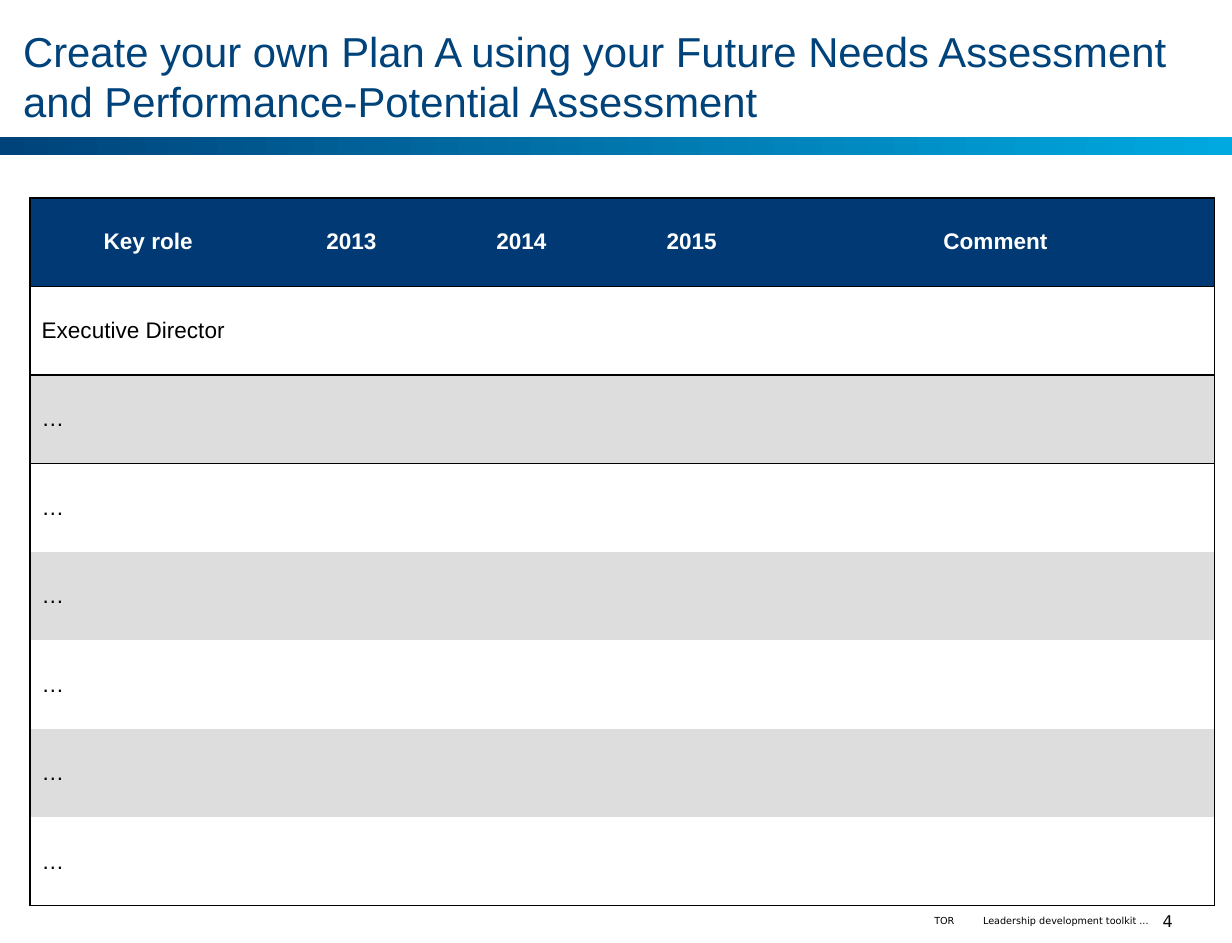
"""Build the Plan A succession slide: title, gradient band, role table and footer."""
import lxml.etree
import pptx
import pptx.dml.color
import pptx.enum.shapes
import pptx.enum.text
import pptx.oxml.ns
import pptx.util

Pt = pptx.util.Pt
ALIGN = pptx.enum.text.PP_ALIGN
MIDDLE = pptx.enum.text.MSO_ANCHOR.MIDDLE
qn = pptx.oxml.ns.qn


def rgb(value):
    """Turn a hex string into a colour."""
    return pptx.dml.color.RGBColor.from_string(value)


def write(frame, text, size, color, font, align=ALIGN.LEFT, bold=False):
    """Fill a text frame with one formatted paragraph."""
    frame.text = text
    paragraph = frame.paragraphs[0]
    paragraph.alignment = align
    for run in paragraph.runs:
        run.font.size = Pt(size)
        run.font.name = font
        run.font.bold = bold
        run.font.color.rgb = rgb(color)


deck = pptx.Presentation()
deck.slide_width = Pt(766.08)
deck.slide_height = Pt(586.08)
slide = deck.slides.add_slide(deck.slide_layouts[6])

band = slide.shapes.add_shape(
    pptx.enum.shapes.MSO_SHAPE.RECTANGLE, 0, Pt(85), deck.slide_width, Pt(11.5))
band.shadow.inherit = False
band.line.fill.background()
band.fill.gradient()
band.fill.gradient_angle = 0
for stop, color in zip(band.fill.gradient_stops, ("00437A", "00A9E0")):
    stop.color.rgb = rgb(color)

title = "Create your own Plan A using your Future Needs Assessment and Performance-Potential Assessment"
captions = [
    (title, 14.4, 11.5, 739.4, 71.3, 0, 5.76, 26, "00437A", "Arial", ALIGN.LEFT, True),
    ("TOR", 577.4, 568.8, 16.6, 7.2, 3.6, 0, 6, "000000", "DejaVu Sans", ALIGN.LEFT, False),
    ("Leadership development toolkit ...", 606.2, 568.8, 108, 7.2, 3.6, 0, 6,
     "000000", "DejaVu Sans", ALIGN.RIGHT, False),
    ("4", 713.5, 568.8, 25.2, 7.2, 0, 0, 10, "080808", "DejaVu Sans", ALIGN.CENTER, False),
]
for text, left, top, width, height, inset_left, inset_right, size, color, font, align, wrap in captions:
    frame = slide.shapes.add_textbox(Pt(left), Pt(top), Pt(width), Pt(height)).text_frame
    frame.margin_left, frame.margin_right = Pt(inset_left), Pt(inset_right)
    frame.margin_top = frame.margin_bottom = 0
    frame.vertical_anchor = MIDDLE
    frame.word_wrap = wrap
    write(frame, text, size, color, font, align)

headings = ["Key role", "2013", "2014", "2015", "Comment"]
roles = ["Executive Director"] + ["…"] * 6
column_widths = [146.9, 105.8, 105.8, 105.8, 272.1]
row_height = 55
row_count = len(roles) + 1
last_row, last_column = row_count - 1, len(headings) - 1

plan = slide.shapes.add_table(
    row_count, len(headings), Pt(18.7), Pt(123),
    Pt(sum(column_widths)), Pt(row_height * row_count)).table
plan.first_row = plan.horz_banding = False
plan._tbl.tblPr.find(qn("a:tableStyleId")).text = "{2D5ABB26-0587-4C30-8999-92F81FD0307C}"
for column, width in zip(plan.columns, column_widths):
    column.width = Pt(width)
for row in plan.rows:
    row.height = Pt(row_height)

for r in range(row_count):
    for c in range(len(headings)):
        cell = plan.cell(r, c)
        cell.vertical_anchor = MIDDLE
        edges = {
            "a:lnL": c == 0,
            "a:lnR": c == last_column,
            "a:lnT": r <= 2,
            "a:lnB": r <= 1 or r == last_row,
        }
        for edge, drawn in edges.items():
            if drawn:
                border = lxml.etree.SubElement(cell._tc.get_or_add_tcPr(), qn(edge), w=str(Pt(1)))
                paint = lxml.etree.SubElement(border, qn("a:solidFill"))
                lxml.etree.SubElement(paint, qn("a:srgbClr"), val="000000")
        if r == 0 or r % 2 == 0:
            cell.fill.solid()
            cell.fill.fore_color.rgb = rgb("DDDDDD" if r else "003974")
        else:
            cell.fill.background()
        if r == 0:
            write(cell.text_frame, headings[c], 14, "FFFFFF", "Arial", ALIGN.CENTER, True)
        elif c == 0:
            write(cell.text_frame, roles[r - 1], 14, "000000", "Arial")

deck.save("out.pptx")
